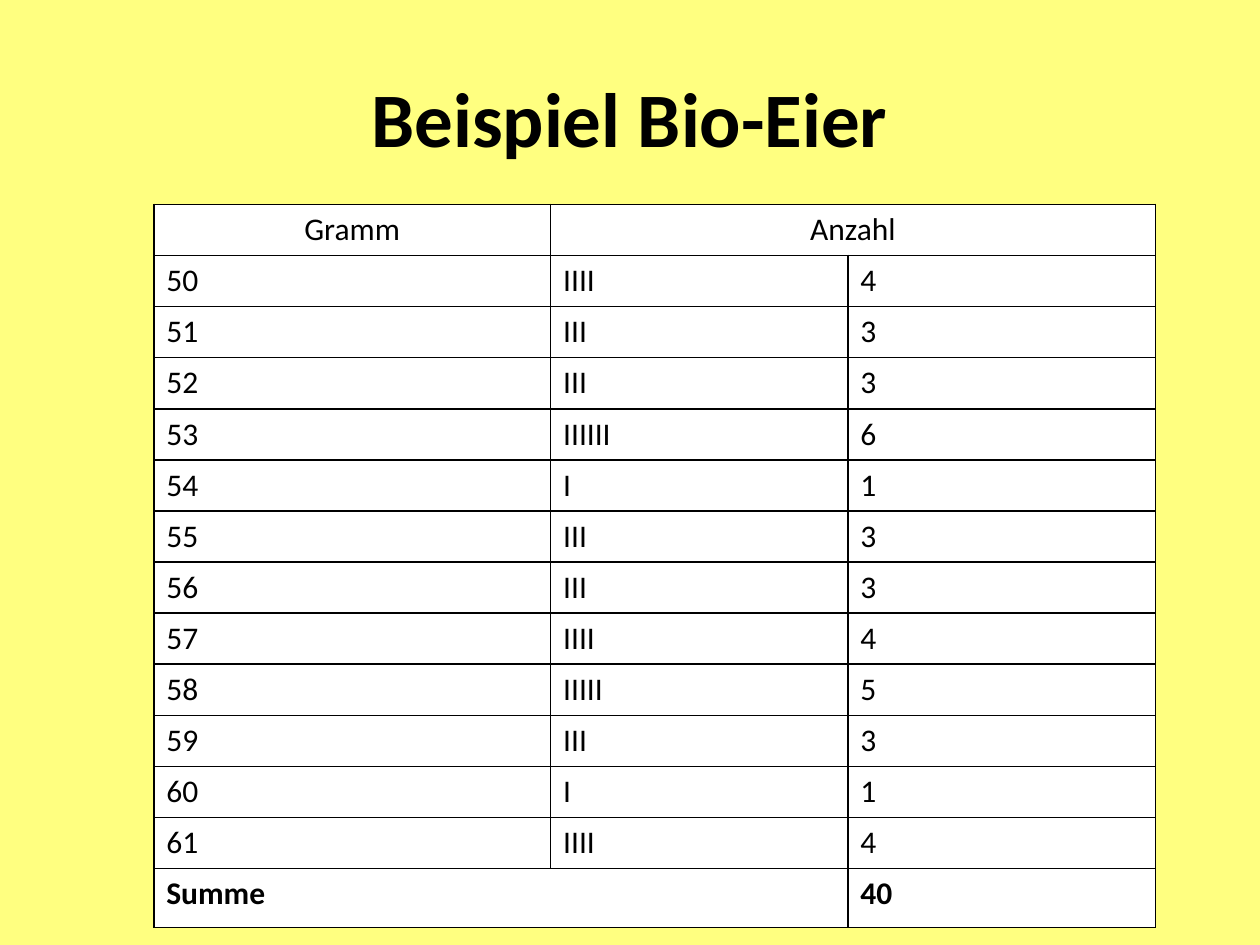
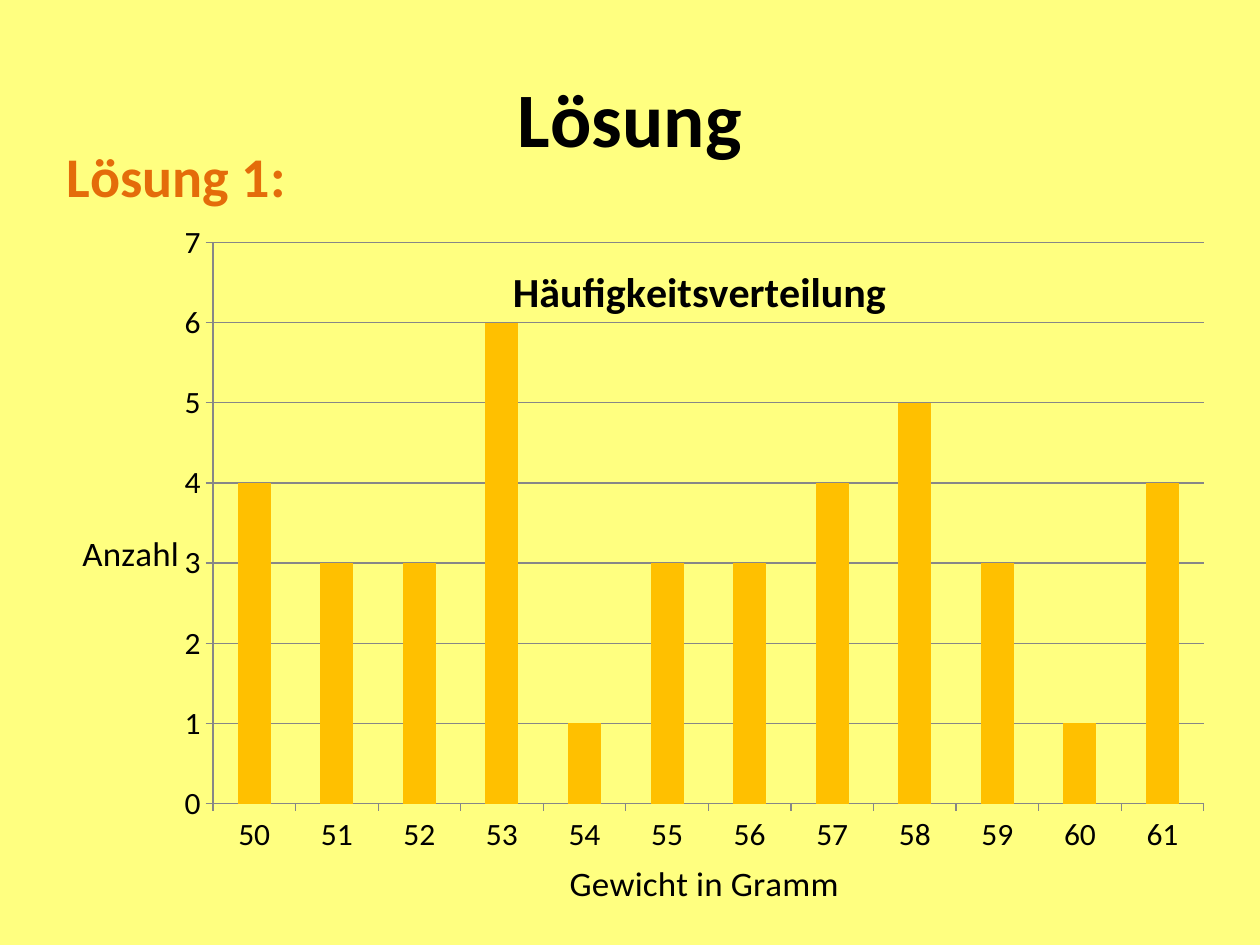
import pptx
import pptx.util
import pptx.chart.data
import pptx.dml.color
import pptx.enum.chart
import pptx.enum.text
import pptx.oxml

Cm = pptx.util.Cm
Pt = pptx.util.Pt
CENTER = pptx.enum.text.PP_ALIGN.CENTER
NS_A = 'xmlns:a="http://schemas.openxmlformats.org/drawingml/2006/main"'
NS_C = 'xmlns:c="http://schemas.openxmlformats.org/drawingml/2006/chart"'
BLACK, WHITE, GREY = "000000", "FFFFFF", "878787"
PALE_YELLOW, AMBER, ORANGE = "FFFF80", "FFC000", "E46C0A"

weights = range(50, 62)
counts = [4, 3, 3, 6, 1, 3, 3, 4, 5, 3, 1, 4]


def rgb(value):
    return pptx.dml.color.RGBColor.from_string(value)


def style(font, size, color=BLACK, bold=False):
    font.name = "Calibri"
    font.size = Pt(size)
    font.bold = bold
    font.color.rgb = rgb(color)


deck = pptx.Presentation()
deck.slide_width = Cm(25.4)
deck.slide_height = Cm(19.05)
background = deck.slide_master.background.fill
background.solid()
background.fore_color.rgb = rgb(PALE_YELLOW)

pages = []
for heading in ("Beispiel Bio-Eier", "Lösung"):
    page = deck.slides.add_slide(deck.slide_layouts[5])
    title = page.shapes.title
    title.left, title.top, title.width, title.height = Cm(1.27), Cm(0.76), Cm(22.86), Cm(3.18)
    title.text_frame.text = heading
    title.text_frame.vertical_anchor = pptx.enum.text.MSO_ANCHOR.MIDDLE
    para = title.text_frame.paragraphs[0]
    para.alignment = CENTER
    style(para.runs[0].font, 44, bold=True)
    pages.append(page)
table_page, chart_page = pages

rows = [("Gramm", "Anzahl", "")]
rows += [(str(weight), "I" * count, str(count)) for weight, count in zip(weights, counts)]
rows += [("Summe", "", str(sum(counts)))]
last = len(rows) - 1

table = table_page.shapes.add_table(len(rows), 3, Cm(3.1), Cm(4.12), Cm(20.19), Cm(14.58)).table
for column, width in zip(table.columns, (8, 5.99, 6.2)):
    column.width = Cm(width)
for index, texts in enumerate(rows):
    table.rows[index].height = Cm(1.19 if index == last else 1.03)
    for position, text in enumerate(texts):
        cell = table.cell(index, position)
        properties = cell._tc.get_or_add_tcPr()
        for side in ("lnL", "lnR", "lnT", "lnB"):
            properties.append(pptx.oxml.parse_xml(
                f'<a:{side} {NS_A} w="12700"><a:solidFill>'
                f'<a:srgbClr val="{BLACK}"/></a:solidFill></a:{side}>'))
        cell.fill.solid()
        cell.fill.fore_color.rgb = rgb(WHITE)
        cell.text_frame.text = text
        para = cell.text_frame.paragraphs[0]
        if index == 0:
            para.alignment = CENTER
        for span in para.runs:
            style(span.font, 18, bold=index == last)
table.cell(0, 1).merge(table.cell(0, 2))
table.cell(last, 0).merge(table.cell(last, 1))

chart_data = pptx.chart.data.CategoryChartData()
chart_data.categories = [str(weight) for weight in weights]
chart_data.add_series("Series 1", counts)
chart = chart_page.shapes.add_chart(
    pptx.enum.chart.XL_CHART_TYPE.COLUMN_CLUSTERED,
    Cm(1.3), Cm(3.73), Cm(23.39), Cm(14.73), chart_data).chart
style(chart.font, 10)
chart.has_legend = False
chart.has_title = True

plot = chart.plots[0]
plot.gap_width = 150
plot.vary_by_categories = False
bars = plot.series[0].format
bars.fill.solid()
bars.fill.fore_color.rgb = rgb(AMBER)
bars.line.fill.background()

for axis in (chart.category_axis, chart.value_axis):
    style(axis.tick_labels.font, 18)
    axis.major_tick_mark = pptx.enum.chart.XL_TICK_MARK.OUTSIDE
    axis.format.line.color.rgb = rgb(GREY)
    axis.format.line.width = Pt(0.75)
counting = chart.value_axis
counting.minimum_scale, counting.maximum_scale, counting.major_unit = 0, 7, 1
counting.has_major_gridlines = True
counting.major_gridlines.format.line.color.rgb = rgb(GREY)
counting.major_gridlines.format.line.width = Pt(0.75)

labels = [
    (chart.chart_title, "Häufigkeitsverteilung", 24, True, 0.38, 0.1),
    (chart.category_axis.axis_title, "Gewicht in Gramm", 20, False, 0.43, 0.93),
    (counting.axis_title, "Anzahl", 20, False, 0.01, 0.47),
]
for label, text, size, bold, left, top in labels:
    label.text_frame.text = text
    style(label.text_frame.paragraphs[0].runs[0].font, size, bold=bold)
    label.element.xpath("c:tx/c:rich/a:bodyPr")[0].set("rot", "0")
    for old in label.element.xpath("c:layout"):
        label.element.remove(old)
    label.element.xpath("c:tx")[0].addnext(pptx.oxml.parse_xml(
        f'<c:layout {NS_C}><c:manualLayout><c:xMode val="edge"/><c:yMode val="edge"/>'
        f'<c:x val="{left}"/><c:y val="{top}"/></c:manualLayout></c:layout>'))
chart.chart_title.include_in_layout = True
chart.chart_title.element.xpath("c:overlay")[0].set("val", "1")

plot_area = chart.element.xpath("c:chart/c:plotArea")[0]
for old in plot_area.xpath("c:layout"):
    plot_area.remove(old)
plot_area.insert(0, pptx.oxml.parse_xml(
    f'<c:layout {NS_C}><c:manualLayout><c:layoutTarget val="inner"/>'
    '<c:xMode val="edge"/><c:yMode val="edge"/><c:x val="0.128"/><c:y val="0.08"/>'
    '<c:w val="0.854"/><c:h val="0.782"/></c:manualLayout></c:layout>'))

box = chart_page.shapes.add_textbox(Cm(1.09), Cm(2.72), Cm(5.59), Cm(1.63))
box.text_frame.word_wrap = True
box.text_frame.text = "Lösung 1:"
style(box.text_frame.paragraphs[0].runs[0].font, 32, ORANGE, True)

deck.save("out.pptx")
